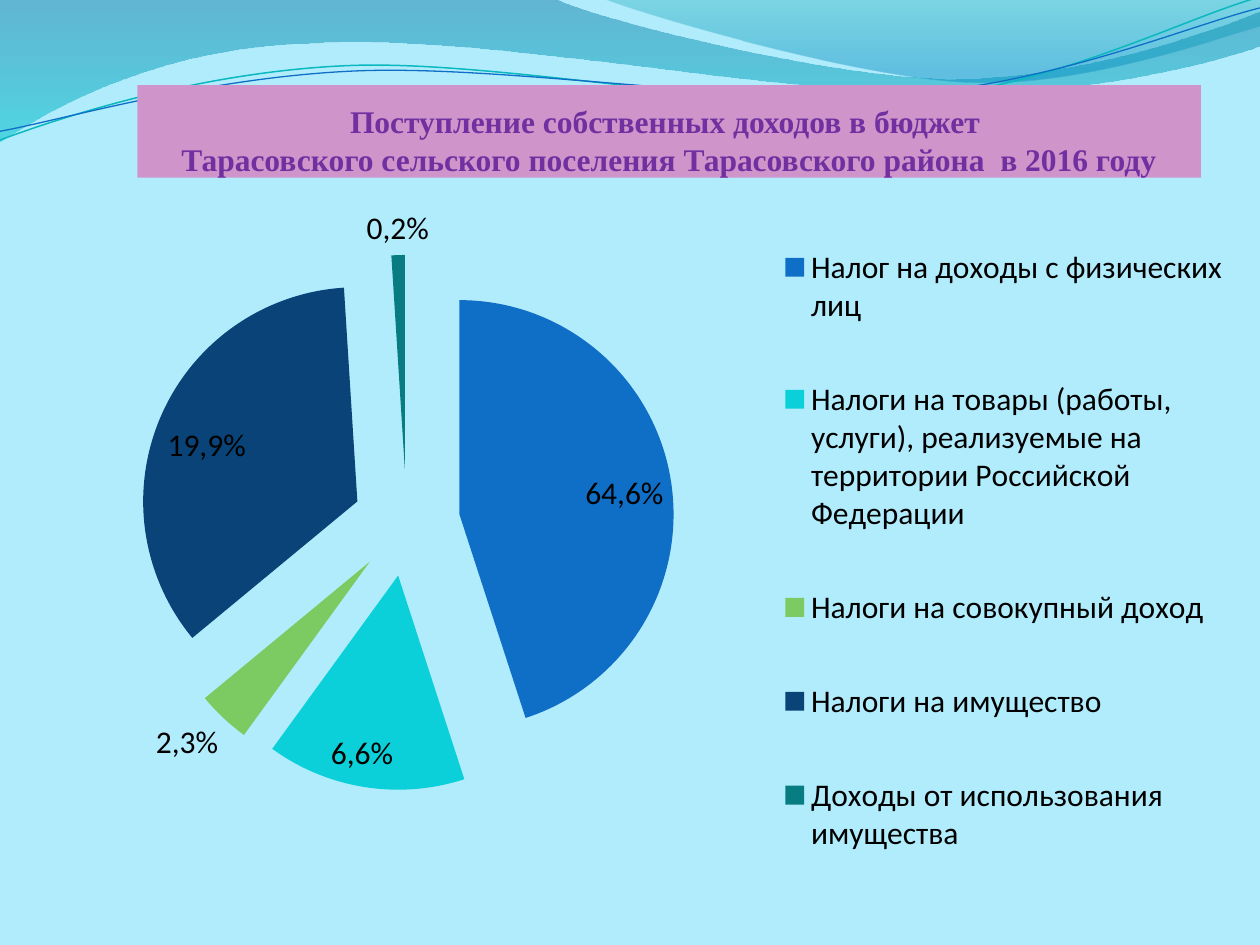
"""Build the slide on own budget revenues of the Tarasovskoye settlement for 2016."""
from dataclasses import dataclass
from math import cos, radians, sin

from lxml.etree import SubElement
from pptx import Presentation
from pptx.chart.data import CategoryChartData
from pptx.dml.color import RGBColor
from pptx.enum.chart import XL_CHART_TYPE, XL_LABEL_POSITION, XL_LEGEND_POSITION
from pptx.enum.text import MSO_ANCHOR, MSO_AUTO_SIZE, PP_ALIGN
from pptx.oxml import parse_xml
from pptx.oxml.ns import nsdecls, qn
from pptx.util import Pt


@dataclass(frozen=True)
class Theme:
    background: str = "B1ECFD"
    title_fill: str = "CF95CB"
    title_text: str = "7030A0"
    chart_text: str = "000000"
    title_font: str = "Times New Roman"
    chart_font: str = "Calibri"
    text_size: int = 18


theme = Theme()


def draw_curve(shapes, box, start, segments, closed, rotation=0):
    """Draw a path in a box, in points; six numbers make a Bezier curve, two a line."""
    left, top, width, height = box
    builder = shapes.build_freeform(0, 0, scale=float(Pt(1)))
    builder.add_line_segments([(width, height)], close=False)
    curve = builder.convert_to_shape()
    curve.left, curve.top, curve.width, curve.height = map(Pt, box)
    curve.rotation = rotation
    curve.shadow.inherit = False
    outline = curve._element.spPr.find(f".//{qn('a:path')}")
    for old in list(outline):
        outline.remove(old)
    outline.set("w", str(round(width * 100)))
    outline.set("h", str(round(height * 100)))
    cosine, sine = cos(radians(-rotation)), sin(radians(-rotation))
    for index, numbers in enumerate([start, *segments]):
        tag = "moveTo" if index == 0 else "cubicBezTo" if len(numbers) == 6 else "lnTo"
        command = SubElement(outline, qn(f"a:{tag}"))
        for x, y in zip(numbers[::2], numbers[1::2]):
            across, down = x - left - width / 2, y - top - height / 2
            point = SubElement(command, qn("a:pt"))
            point.set("x", str(round((across * cosine - down * sine + width / 2) * 100)))
            point.set("y", str(round((across * sine + down * cosine + height / 2) * 100)))
    if closed:
        SubElement(outline, qn("a:close"))
    return curve


def make_layout(**values):
    """Return a manual layout for a chart part."""
    layout = parse_xml(f"<c:layout {nsdecls('c')}><c:manualLayout/></c:layout>")
    for name, value in values.items():
        SubElement(layout[0], qn(f"c:{name}")).set("val", str(value))
    return layout


deck = Presentation()
deck.slide_width, deck.slide_height = Pt(720), Pt(540)
page = deck.slides.add_slide(deck.slide_layouts[5])
page.background.fill.solid()
page.background.fill.fore_color.rgb = RGBColor.from_string(theme.background)

waves = [
    ((-0.7, -0.7, 721.4, 82.1), (0, 0),
     [(317, -0.7), (343, 12, 478, 45, 546, 45), (614, 45, 690, 19, 720, 6.5), (720.7, 26),
      (708, 32, 626, 55, 537, 54), (448, 54, 275, 20, 185, 24.5), (93, 26, 33, 60, -0.7, 81.4), (0, 0)],
     [(0, "0074A1", 45), (100, "00C6CF", 55)]),
    ((345, -0.7, 375, 50.4), (345, -0.7),
     [(366, 8, 491, 45, 554, 47), (616, 50, 692, 23, 720, 15), (720, 0), (345, -0.7)],
     [(0, "00A1A9", 30), (80, "008BBF", 45)]),
]
for box, start, segments, stops in waves:
    wave = draw_curve(page.shapes, box, start, segments, True)
    wave.line.fill.background()
    stop_xml = "".join(
        f'<a:gs pos="{position * 1000}"><a:srgbClr val="{color}"><a:alpha val="{opacity * 1000}"/></a:srgbClr></a:gs>'
        for position, color, opacity in stops)
    gradient = parse_xml(f'<a:gradFill {nsdecls("a")} rotWithShape="1"><a:gsLst>{stop_xml}</a:gsLst>'
                         '<a:lin ang="5400000" scaled="0"/></a:gradFill>')
    wave._element.spPr.find(qn("a:custGeom")).addnext(gradient)

strands = [
    ((-1.4, 15.8, 721.4, 51.1), (0, 80),
     [(35, 67, 114, 41, 199, 37.5), (284, 34, 427, 64, 513, 57.5), (600, 51, 675, 11, 719, -1.5)], "0AB8BF", 0.85),
    ((-1.4, 21.6, 722.2, 41.8), (0, 75),
     [(34, 69, 118, 44, 204, 40.5), (290, 37, 430, 60.5, 516, 54), (602, 48, 678, 15, 720, 4.5)], "0F6FC6", 0.75),
]
for box, start, segments, color, width in strands:
    strand = draw_curve(page.shapes, box, start, segments, False, 357.3)
    strand.fill.background()
    strand.line.color.rgb = RGBColor.from_string(color)
    strand.line.width = Pt(width)

title = page.shapes.title
title.left, title.top, title.width, title.height = Pt(78.5), Pt(48.7), Pt(607.7), Pt(52.8)
title.fill.solid()
title.fill.fore_color.rgb = RGBColor.from_string(theme.title_fill)
frame = title.text_frame
frame.text = "Поступление собственных доходов в бюджет \vТарасовского сельского поселения Тарасовского района  в 2016 году"
frame.word_wrap = True
frame.auto_size = MSO_AUTO_SIZE.NONE
frame.vertical_anchor = MSO_ANCHOR.BOTTOM
frame.margin_left = frame.margin_right = frame.margin_bottom = 0
frame.margin_top = Pt(3.6)
para = frame.paragraphs[0]
para.alignment = PP_ALIGN.CENTER
for span in para.runs:
    span.font.name = theme.title_font
    span.font.size = Pt(theme.text_size)
    span.font.bold = True
    span.font.color.rgb = RGBColor.from_string(theme.title_text)
page.shapes._spTree.append(title._element)

inside, outside = XL_LABEL_POSITION.INSIDE_END, XL_LABEL_POSITION.OUTSIDE_END
revenues = [
    ("Налог на доходы с физических лиц", 45, "64,6%", "0F6FC6", inside, (0, -0.01)),
    ("Налоги на товары (работы, услуги), реализуемые на территории Российской Федерации",
     15, "6,6%", "0BD0D9", inside, (-0.03, -0.01)),
    ("Налоги на совокупный доход", 4, "2,3%", "7CCA62", outside, None),
    ("Налоги на имущество", 35, "19,9%", "094377", inside, (0, 0.01)),
    ("Доходы от использования имущества", 1, "0,2%", "077D82", outside, None),
]
chart_width, chart_height = 665.3, 426.2
chart_data = CategoryChartData()
chart_data.categories = [revenue[0] for revenue in revenues]
chart_data.add_series("Series 1", [revenue[1] for revenue in revenues])
chart = page.shapes.add_chart(XL_CHART_TYPE.PIE, Pt(54.7), Pt(92.9), Pt(chart_width), Pt(chart_height), chart_data).chart
chart.has_title = False
chart.has_legend = True
chart.legend.position = XL_LEGEND_POSITION.RIGHT
chart.legend.include_in_layout = False
plot = chart.plots[0]
plot.vary_by_categories = True
plot.has_data_labels = True
plot.data_labels.show_percentage = True
plot.data_labels.show_value = False
fonts = [chart.font, chart.legend.font, plot.data_labels.font]

series = plot.series[0]
series._element.find(qn("c:tx")).addnext(parse_xml(f'<c:explosion {nsdecls("c")} val="25"/>'))
for index, (name, value, text, color, position, shift) in enumerate(revenues):
    point = series.points[index]
    point.format.fill.solid()
    point.format.fill.fore_color.rgb = RGBColor.from_string(color)
    label = point.data_label
    label.text_frame.text = text
    label.position = position
    fonts.append(label.text_frame.paragraphs[0].runs[0].font)
    if shift:
        label_xml = series._element.find(qn("c:dLbls"))[index]
        for old in label_xml.findall(qn("c:layout")):
            label_xml.remove(old)
        label_xml.find(qn("c:idx")).addnext(make_layout(x=shift[0], y=shift[1]))
for font in fonts:
    font.name = theme.chart_font
    font.size = Pt(theme.text_size)
    font.color.rgb = RGBColor.from_string(theme.chart_text)
for leader in chart._chartSpace.iter(qn("c:showLeaderLines")):
    leader.set("val", "0")

plot_area = chart._chartSpace.chart.plotArea
for old in plot_area.findall(qn("c:layout")):
    plot_area.remove(old)
plot_area.insert(0, make_layout(layoutTarget="inner", xMode="edge", yMode="edge", x=24.6 / chart_width,
                                y=52.4 / chart_height, w=306 / chart_width, h=306.9 / chart_height))
chart.legend._element.find(qn("c:legendPos")).addnext(
    make_layout(xMode="edge", yMode="edge", x=0.57, y=0.04, w=0.42, h=0.96))

deck.save("out.pptx")
